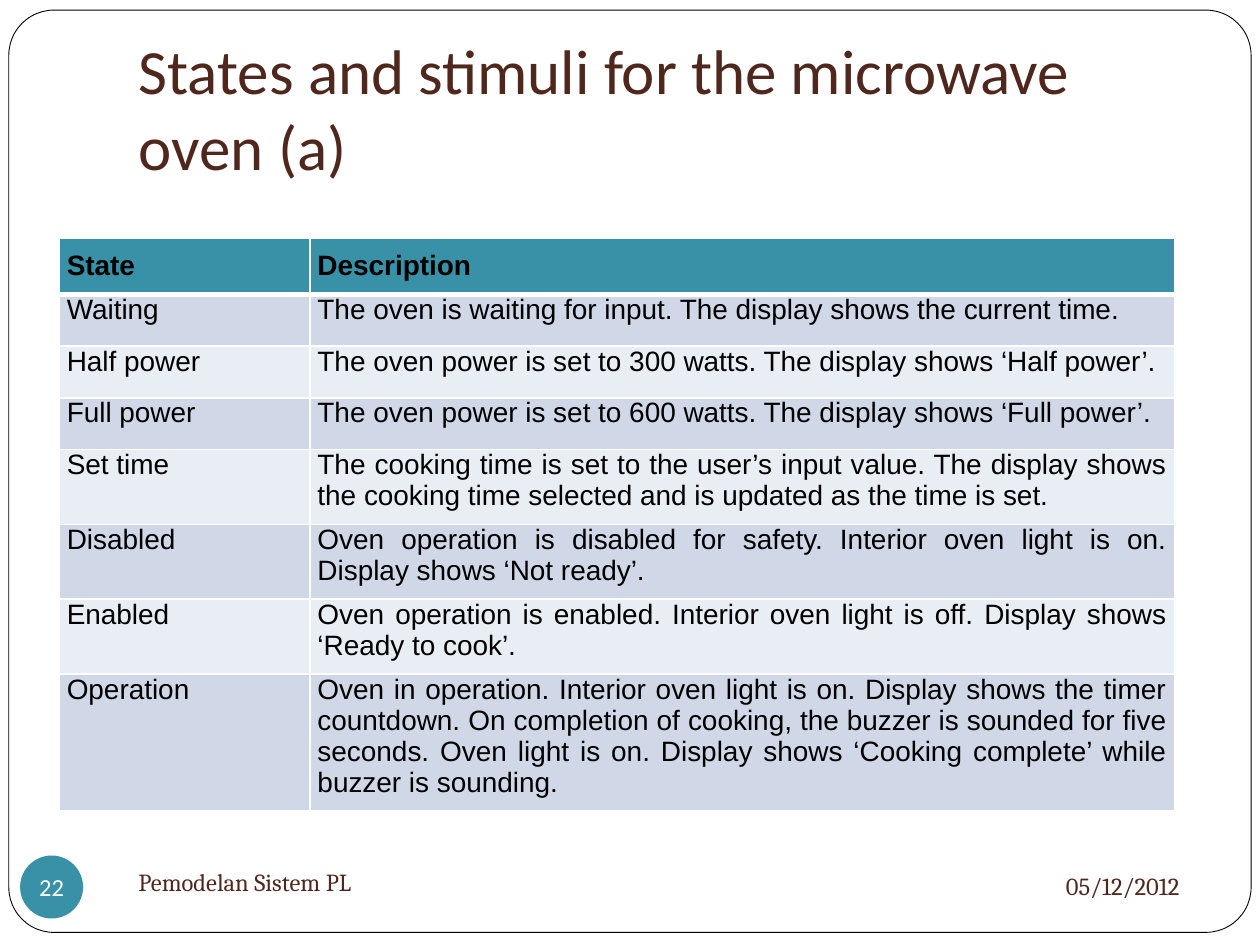
from lxml.etree import SubElement
from pptx import Presentation
from pptx.dml.color import RGBColor
from pptx.enum.shapes import MSO_SHAPE
from pptx.enum.text import MSO_ANCHOR, PP_ALIGN
from pptx.oxml.ns import qn
from pptx.util import Inches, Pt

BLACK = RGBColor(0x00, 0x00, 0x00)
WHITE = RGBColor(0xFF, 0xFF, 0xFF)
BROWN = RGBColor(0x4F, 0x27, 0x1C)
TEAL = RGBColor(0x38, 0x91, 0xA7)
BAND_DARK = RGBColor(0xD0, 0xD8, 0xE8)
BAND_LIGHT = RGBColor(0xE9, 0xED, 0xF4)

TITLE_FONT = {"name": "Calibri", "size": Pt(36), "color": BROWN}
FOOTER_FONT = {"name": "Cambria", "size": Pt(14), "color": BROWN}
NUMBER_FONT = {"name": "Calibri", "size": Pt(14), "color": WHITE}
CELL_FONT = {"name": "Arial", "size": Pt(16), "color": BLACK, "bold": False}
HEADER_FONT = {**CELL_FONT, "bold": True}

COL_WIDTHS = (1.99, 6.86)
ROW_HEIGHT = 0.41
ROWS = [
    ("State", "Description"),
    ("Waiting", "The oven is waiting for input. The display shows the current time."),
    ("Half power", "The oven power is set to 300 watts. The display shows ‘Half power’."),
    ("Full power", "The oven power is set to 600 watts. The display shows ‘Full power’."),
    ("Set time", "The cooking time is set to the user’s input value. The display shows "
                 "the cooking time selected and is updated as the time is set."),
    ("Disabled", "Oven operation is disabled for safety. Interior oven light is on. "
                 "Display shows ‘Not ready’."),
    ("Enabled", "Oven operation is enabled. Interior oven light is off. Display shows "
                "‘Ready to cook’."),
    ("Operation", "Oven in operation. Interior oven light is on. Display shows the timer "
                  "countdown. On completion of cooking, the buzzer is sounded for five "
                  "seconds. Oven light is on. Display shows ‘Cooking complete’ while "
                  "buzzer is sounding."),
]


def set_attrs(obj, values):
    for name, value in values.items():
        setattr(obj, name, value)


def set_margins(obj, left, top, right, bottom):
    set_attrs(obj, {"margin_left": Inches(left), "margin_top": Inches(top),
                    "margin_right": Inches(right), "margin_bottom": Inches(bottom)})


def write(tf, text, font, align=PP_ALIGN.LEFT):
    p = tf.paragraphs[0]
    p.alignment = align
    r = p.add_run()
    r.text = text
    for name, value in font.items():
        if name == "color":
            r.font.color.rgb = value
        else:
            setattr(r.font, name, value)


def add_shape(s, kind, box, fill):
    sp = s.shapes.add_shape(kind, *map(Inches, box))
    sp.shadow.inherit = False
    sp.fill.solid()
    sp.fill.fore_color.rgb = fill
    return sp


def add_frame(s):
    sp = add_shape(s, MSO_SHAPE.ROUNDED_RECTANGLE, (0.07, 0.08, 9.86, 7.32), WHITE)
    sp.adjustments[0] = 0.049
    sp.line.color.rgb = BLACK
    sp.line.width = Pt(0.5)
    # Send behind the title
    s.shapes.title.element.addprevious(sp.element)


def add_title(s, text):
    sp = s.shapes.title
    set_attrs(sp, {"left": Inches(1), "top": Inches(0.3),
                   "width": Inches(8.5), "height": Inches(1.25)})
    tf = sp.text_frame
    set_attrs(tf, {"word_wrap": True, "vertical_anchor": MSO_ANCHOR.BOTTOM})
    set_margins(tf, 0.1, 0.05, 0.1, 0.1)
    write(tf, text, TITLE_FONT)


def add_border(cell, side, width):
    ln = SubElement(cell._tc.get_or_add_tcPr(), qn(f"a:ln{side}"), w=str(Pt(width)))
    fill = SubElement(ln, qn("a:solidFill"))
    SubElement(fill, qn("a:srgbClr"), val=str(WHITE))


def format_cell(cell, row, text):
    header = row == 0
    set_margins(cell, 0.06, 0.1 if header else 0, 0.06, 0.1)
    # Borders come before the fill in the cell properties
    widths = {"L": 1, "R": 1, "T": 3 if row == 1 else 1, "B": 3 if header else 1}
    for side, width in widths.items():
        add_border(cell, side, width)
    cell.fill.solid()
    band = BAND_DARK if row % 2 else BAND_LIGHT
    cell.fill.fore_color.rgb = TEAL if header else band
    write(cell.text_frame, text, HEADER_FONT if header else CELL_FONT, PP_ALIGN.JUSTIFY)


def add_state_table(s):
    table = s.shapes.add_table(
        len(ROWS), len(COL_WIDTHS), Inches(0.47), Inches(1.89),
        Inches(sum(COL_WIDTHS)), Inches(ROW_HEIGHT * len(ROWS))).table
    for column, width in zip(table.columns, COL_WIDTHS):
        column.width = Inches(width)
    for i, texts in enumerate(ROWS):
        table.rows[i].height = Inches(ROW_HEIGHT)
        for j, text in enumerate(texts):
            format_cell(table.cell(i, j), i, text)


def add_page_number(s, number):
    sp = add_shape(s, MSO_SHAPE.OVAL, (0.16, 6.79, 0.5, 0.5), TEAL)
    sp.line.fill.background()
    tf = sp.text_frame
    set_attrs(tf, {"word_wrap": False, "vertical_anchor": MSO_ANCHOR.MIDDLE})
    set_margins(tf, 0, 0, 0, 0)
    write(tf, number, NUMBER_FONT, PP_ALIGN.CENTER)


def add_footer(s, box, text, align):
    tf = s.shapes.add_textbox(*map(Inches, box)).text_frame
    set_attrs(tf, {"word_wrap": True, "vertical_anchor": MSO_ANCHOR.MIDDLE})
    write(tf, text, FOOTER_FONT, align)


def main():
    prs = Presentation()
    set_attrs(prs, {"slide_width": Inches(10), "slide_height": Inches(7.5)})
    s = prs.slides.add_slide(prs.slide_layouts[5])

    # Frame and title
    add_frame(s)
    add_title(s, "States and stimuli for the microwave oven (a)")

    # States
    add_state_table(s)

    # Footer
    add_page_number(s, "22")
    add_footer(s, (1, 6.75, 4.33, 0.5), "Pemodelan Sistem PL", PP_ALIGN.LEFT)
    add_footer(s, (6.75, 6.77, 2.71, 0.52), "05/12/2012", PP_ALIGN.RIGHT)

    prs.save("out.pptx")


if __name__ == "__main__":
    main()
